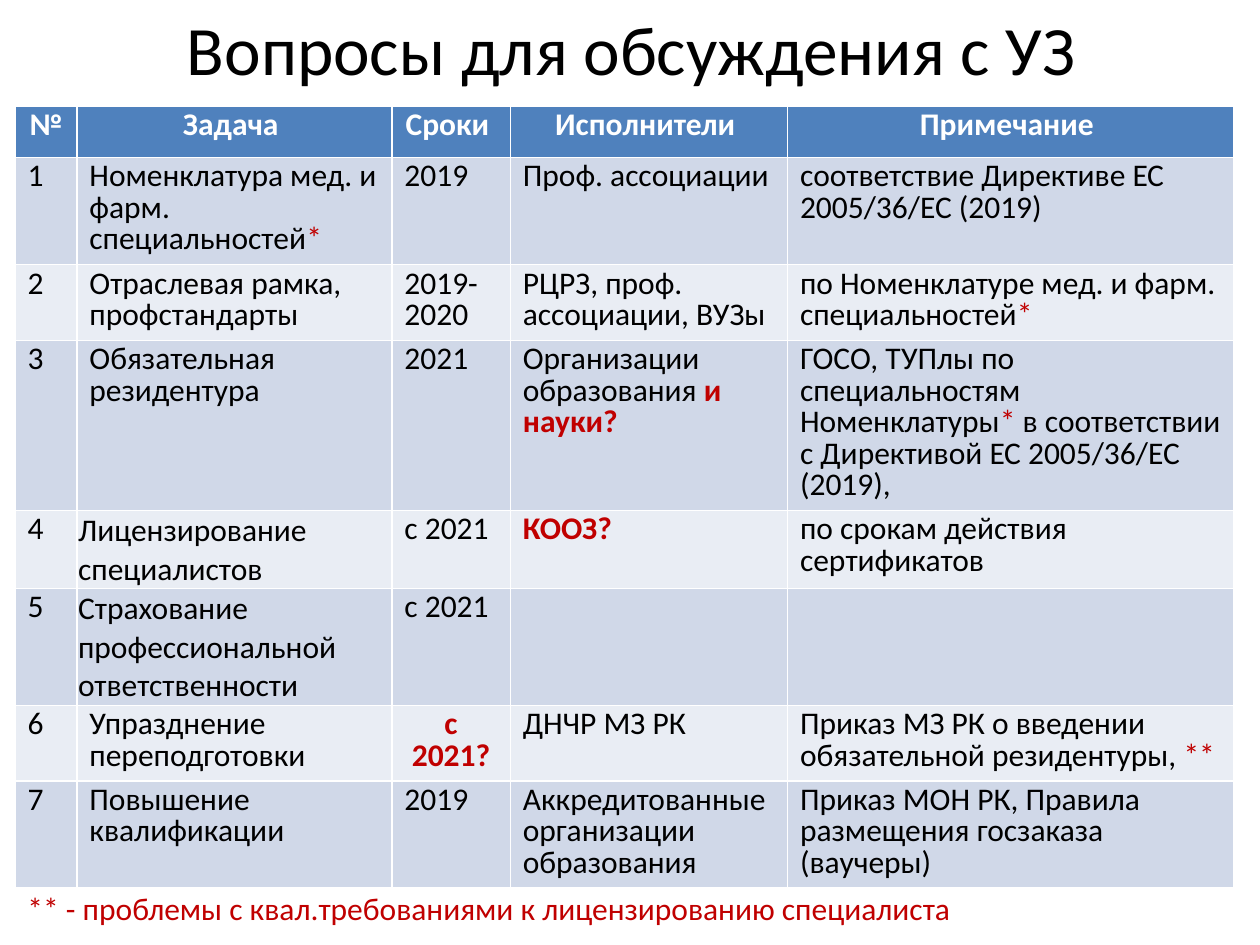
from pptx import Presentation
from pptx.dml.color import RGBColor
from pptx.enum.text import MSO_ANCHOR, PP_ALIGN
from pptx.util import Inches, Pt

FONT = "Calibri"
COLORS = {"head": "4F81BD", "odd": "D0D8E8", "even": "E9EDF4",
          "white": "FFFFFF", "black": "000000", "red": "C00000"}
WIDTHS = [0.49, 2.5, 0.94, 2.2, 3.54]
HEADS = ["№", "Задача ", "Сроки ", "Исполнители ", "Примечание "]
# Text between bars is red; a red question is also bold.
TASKS = [
    ["Номенклатура мед. и фарм. специальностей|*|", "2019",
     "Проф. ассоциации", "соответствие Директиве ЕС 2005/36/EC (2019)"],
    ["Отраслевая рамка, профстандарты", "2019-2020",
     "РЦРЗ, проф. ассоциации, ВУЗы",
     "по Номенклатуре мед. и фарм. специальностей|*|"],
    ["Обязательная резидентура", "2021",
     "Организации образования |и науки?|",
     "ГОСО, ТУПлы по специальностям Номенклатуры|* |"
     "в соответствии с Директивой ЕС 2005/36/EC (2019),"],
    ["Лицензирование специалистов", "с 2021", "|КООЗ?|",
     "по срокам действия сертификатов"],
    ["Страхование профессиональной ответственности", "с 2021", "", ""],
    ["Упразднение переподготовки", "|с 2021?|", "ДНЧР МЗ РК",
     "Приказ МЗ РК о введении обязательной резидентуры, |**|"],
    ["Повышение квалификации", "2019",
     "Аккредитованные организации образования",
     "Приказ МОН РК, Правила размещения госзаказа (ваучеры)"],
]
TIGHT = {4, 5}  # rows whose task has narrow margins and normal spacing


def color(name):
    return RGBColor.from_string(COLORS[name])


def style(run, tint, size=18, bold=False):
    font = run.font
    font.name, font.size, font.bold = FONT, Pt(size), bold
    font.color.rgb = color(tint)


def write(para, text, tint="black", bold=False):
    """Add runs, with the parts between bars in red."""
    para.line_spacing = Pt(18)
    for i, part in enumerate(text.split("|")):
        if part:
            run = para.add_run()
            run.text = part
            if i % 2:
                style(run, "red", bold=part.endswith("?"))
            else:
                style(run, tint, bold=bold)


def add_title(slide, left, top, width, height):
    title = slide.shapes.title
    title.left, title.top, title.width, title.height = left, top, width, height
    frame = title.text_frame
    frame.text = "Вопросы для обсуждения с УЗ"
    frame.vertical_anchor = MSO_ANCHOR.MIDDLE
    para = frame.paragraphs[0]
    para.alignment = PP_ALIGN.CENTER
    style(para.runs[0], "black", 39.6)


def tighten(cell):
    cell.vertical_anchor = MSO_ANCHOR.MIDDLE
    cell.margin_left = cell.margin_top = cell.margin_right = Inches(0.01)
    cell.margin_bottom = 0
    cell.text_frame.paragraphs[0].line_spacing = None


def add_tasks(slide, left, top, width, height):
    rows = [HEADS] + [[str(n)] + task for n, task in enumerate(TASKS, 1)]
    table = slide.shapes.add_table(
        len(rows), len(HEADS), left, top, width, height).table
    for col, size in zip(table.columns, WIDTHS):
        col.width = Inches(size)
    for r, row in enumerate(rows):
        fill = "head" if r == 0 else "odd" if r % 2 else "even"
        for c, text in enumerate(row):
            cell = table.cell(r, c)
            cell.fill.solid()
            cell.fill.fore_color.rgb = color(fill)
            para = cell.text_frame.paragraphs[0]
            if r == 0:
                write(para, text, "white", True)
            else:
                write(para, text)
            if r == 0 or (c == 2 and text.startswith("|")):
                para.alignment = PP_ALIGN.CENTER
            if c == 1 and r in TIGHT:
                tighten(cell)


def add_note(slide, left, top, width, height):
    frame = slide.shapes.add_textbox(left, top, width, height).text_frame
    frame.word_wrap = True
    write(frame.paragraphs[0],
          "** - проблемы с квал.требованиями к лицензированию специалиста",
          "red")


def main():
    deck = Presentation()
    deck.slide_width, deck.slide_height = Inches(10), Inches(7.5)
    slide = deck.slides.add_slide(deck.slide_layouts[5])
    add_title(slide, Inches(0.51), 0, Inches(9), Inches(0.76))
    add_tasks(slide, Inches(0.12), Inches(0.84), Inches(sum(WIDTHS)),
              Inches(0.41 * (len(TASKS) + 1)))
    add_note(slide, Inches(0.12), Inches(7.06), Inches(8.9), Inches(0.36))
    deck.save("out.pptx")


if __name__ == "__main__":
    main()
